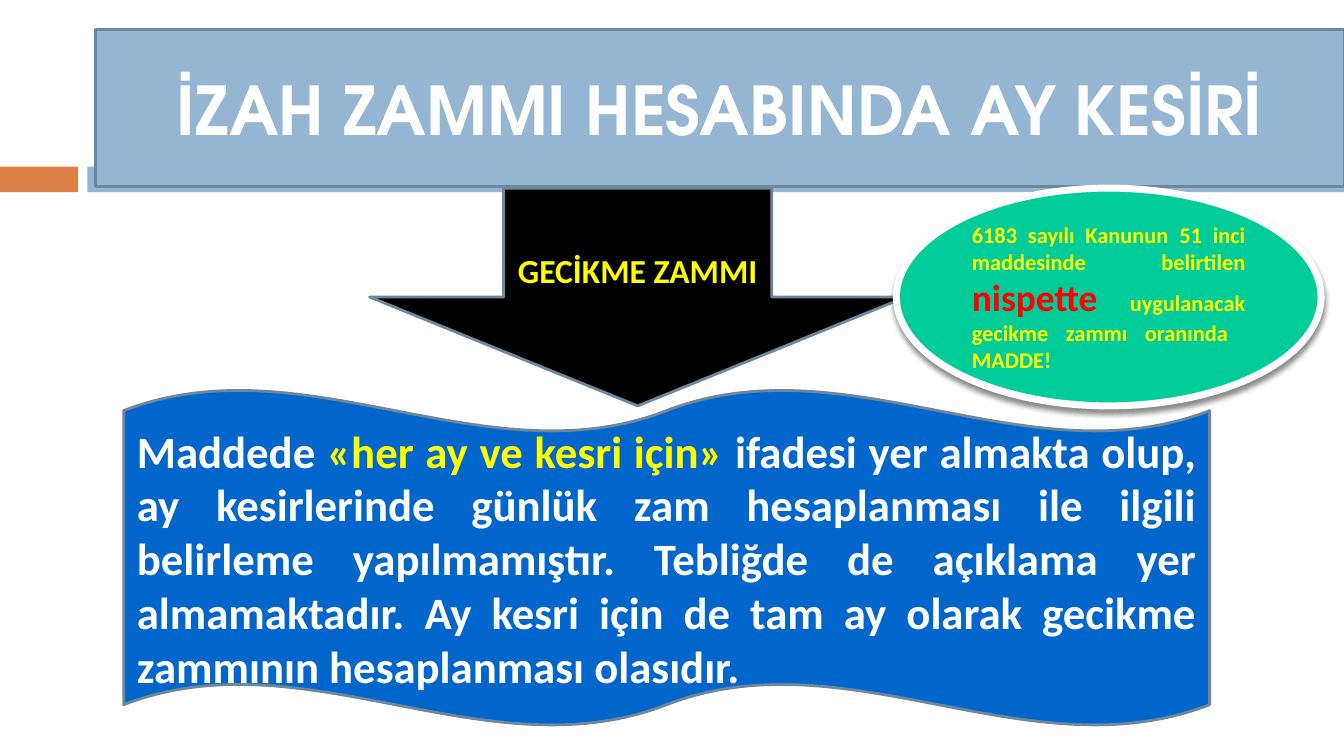
from lxml.etree import SubElement
from pptx import Presentation
from pptx.dml.color import RGBColor
from pptx.enum.shapes import MSO_SHAPE
from pptx.enum.text import MSO_ANCHOR, PP_ALIGN
from pptx.oxml.ns import qn
from pptx.util import Inches, Pt

WHITE = RGBColor(0xFF, 0xFF, 0xFF)
BLACK = RGBColor(0x00, 0x00, 0x00)
YELLOW = RGBColor(0xFF, 0xFF, 0x00)
RED = RGBColor(0xFF, 0x00, 0x00)
ORANGE = RGBColor(0xDD, 0x80, 0x47)
LIGHT_BLUE = RGBColor(0x94, 0xB6, 0xD2)
OUTLINE = RGBColor(0x6D, 0x87, 0x9B)
BLUE = RGBColor(0x00, 0x66, 0xCC)
GREEN = RGBColor(0x00, 0xCC, 0x99)


def add_filled_shape(page, kind, box, fill, line=None, line_width=1.5):
    shape = page.shapes.add_shape(kind, *(Inches(length) for length in box))
    shape.shadow.inherit = False
    shape.fill.solid()
    shape.fill.fore_color.rgb = fill
    if line is None:
        shape.line.fill.background()
    else:
        shape.line.color.rgb = line
        shape.line.width = Pt(line_width)
    return shape


def write_text(shape, spans, size, color, align=PP_ALIGN.CENTER, font="Calibri"):
    """Fill the shape with one bold paragraph; a span is (text, color, size), None keeps the default."""
    frame = shape.text_frame
    frame.word_wrap = True
    frame.vertical_anchor = MSO_ANCHOR.MIDDLE
    para = frame.paragraphs[0]
    para.alignment = align
    para.font.name = font
    para.font.bold = True
    for text, span_color, span_size in spans:
        span = para.add_run()
        span.text = text
        span.font.color.rgb = span_color or color
        span.font.size = Pt(span_size or size)


def add_drop_shadow(shape):
    effects = shape._element.spPr.find(qn("a:effectLst"))
    shadow = SubElement(effects, qn("a:outerShdw"), blurRad=str(Pt(3)),
                        dist=str(Pt(2.4)), dir="5400000", rotWithShape="0")
    color = SubElement(shadow, qn("a:srgbClr"), val=str(BLACK))
    SubElement(color, qn("a:alpha"), val="45000")


def add_header(page, left, top, width, height):
    band_top, band_height = top + 1.02, 0.19
    add_filled_shape(page, MSO_SHAPE.RECTANGLE, (left, band_top, 0.58, band_height), ORANGE)
    add_filled_shape(page, MSO_SHAPE.RECTANGLE,
                     (left + 0.65, band_top, width - 0.65, band_height), LIGHT_BLUE)
    title = add_filled_shape(page, MSO_SHAPE.RECTANGLE,
                             (left + 0.71, top, width - 0.71, height), LIGHT_BLUE, OUTLINE)
    write_text(title, [("İZAH ZAMMI HESABINDA AY KESİRİ", None, None)], 36, WHITE,
               font="TeX Gyre Adventor")


def add_arrow(page, *box):
    arrow = add_filled_shape(page, MSO_SHAPE.DOWN_ARROW, box, BLACK, OUTLINE)
    write_text(arrow, [("GECİKME ZAMMI", None, None)], 18, YELLOW)


def add_explanation(page, *box):
    wave = add_filled_shape(page, MSO_SHAPE.DOUBLE_WAVE, box, BLUE, OUTLINE)
    write_text(wave, [
        ("Maddede ", None, None),
        ("«her ay ve kesri için» ", YELLOW, None),
        ("ifadesi yer almakta olup, ay kesirlerinde günlük zam hesaplanması ile ilgili "
         "belirleme yapılmamıştır. Tebliğde de açıklama yer almamaktadır. Ay kesri için de "
         "tam ay olarak gecikme zammının hesaplanması olasıdır. ", None, None),
    ], 24, WHITE, PP_ALIGN.JUSTIFY)


def add_law_note(page, *box):
    note = add_filled_shape(page, MSO_SHAPE.OVAL, box, GREEN, WHITE, 3.75)
    add_drop_shadow(note)
    write_text(note, [
        ("6183 sayılı Kanunun 51 inci maddesinde belirtilen ", None, None),
        ("nispette", RED, 20),
        (" uygulanacak gecikme zammı oranında  MADDE!", None, None),
    ], 12, YELLOW, PP_ALIGN.JUSTIFY)


def main():
    deck = Presentation()
    deck.slide_width = Inches(10)
    deck.slide_height = deck.slide_width * 9 // 16
    page = deck.slides.add_slide(deck.slide_layouts[6])
    add_header(page, 0, 0.22, 10, 1.17)
    add_arrow(page, 2.75, 1.4, 3.99, 1.62)
    add_explanation(page, 0.92, 2.9, 8.08, 2.5)
    add_law_note(page, 6.67, 1.4, 3.16, 1.62)
    deck.save("out.pptx")


if __name__ == "__main__":
    main()
